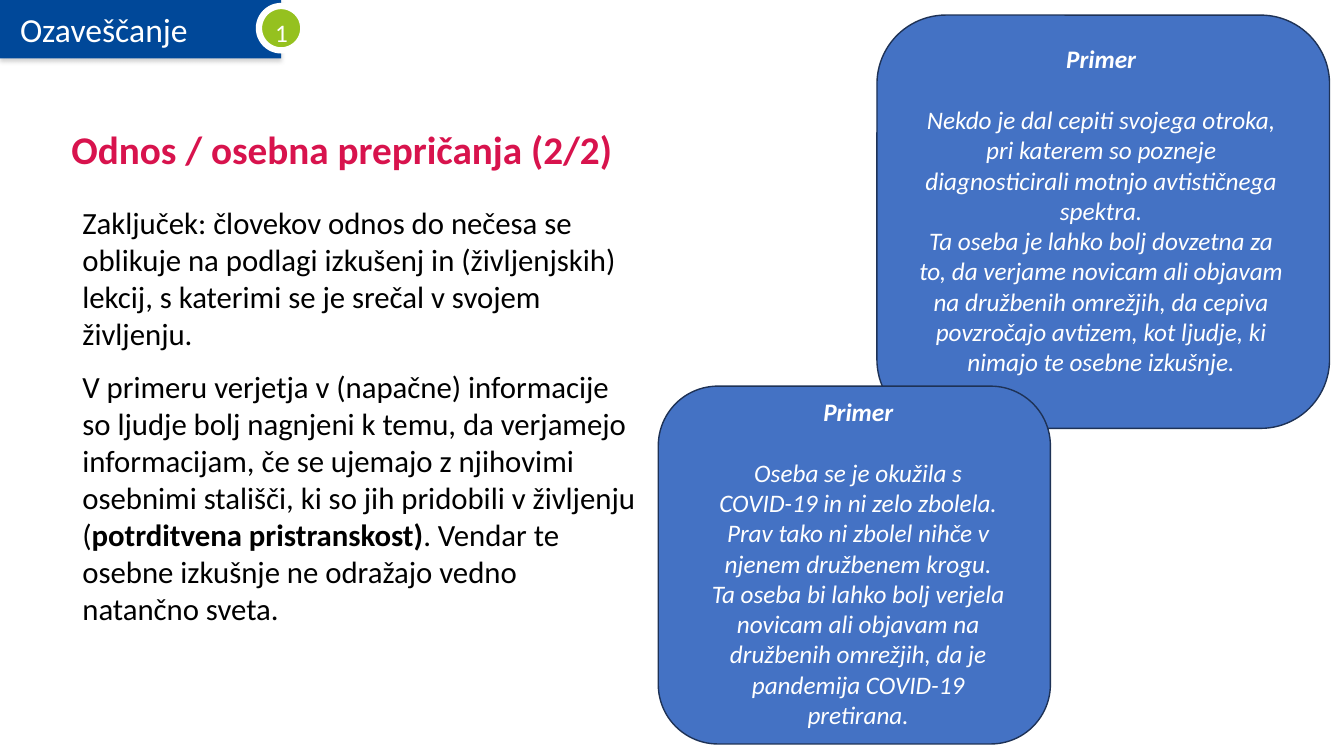
from dataclasses import dataclass

from lxml import etree
from pptx import Presentation
from pptx.enum import shapes, text
from pptx.dml.color import RGBColor
from pptx.oxml import ns
from pptx.util import Pt

COLORS = {
    "navy": "004899", "green": "95C11F", "white": "FFFFFF", "crimson": "D8134D",
    "black": "000000", "card": "4472C4", "card_line": "1E3256", "shadow": "808080",
}
KINDS = shapes.MSO_SHAPE
CENTER = text.PP_ALIGN.CENTER
MIDDLE = text.MSO_ANCHOR.MIDDLE


@dataclass(frozen=True)
class Box:
    left: float
    top: float
    width: float
    height: float

    def lengths(self) -> tuple:
        return Pt(self.left), Pt(self.top), Pt(self.width), Pt(self.height)


@dataclass(frozen=True)
class Run:
    words: str
    bold: bool = False


@dataclass(frozen=True)
class Style:
    size: float
    color: str
    italic: bool = False


@dataclass(frozen=True)
class Example:
    card: Box
    text_box: Box
    sentences: tuple


TITLE = "Odnos / osebna prepričanja (2/2)"
BODY = (
    (Run("Zaključek: človekov odnos do nečesa se oblikuje na podlagi izkušenj in "
         "(življenjskih) lekcij, s katerimi se je srečal v svojem življenju."),),
    (Run("V primeru verjetja v (napačne) informacije so ljudje bolj nagnjeni k temu, da "
         "verjamejo informacijam, če se ujemajo z njihovimi osebnimi stališči, ki so jih "
         "pridobili v življenju ("),
     Run("potrditvena pristranskost)", bold=True),
     Run(". Vendar te osebne izkušnje ne odražajo vedno natančno sveta.")),
)
EXAMPLES = (
    Example(
        Box(626.4, 10.8, 323.3, 295.2), Box(649.4, 27.4, 274.3, 334),
        ("Nekdo je dal cepiti svojega otroka, pri katerem so pozneje diagnosticirali "
         "motnjo avtističnega spektra.",
         "Ta oseba je lahko bolj dovzetna za to, da verjame novicam ali objavam na "
         "družbenih omrežjih, da cepiva povzročajo avtizem, kot ljudje, ki nimajo te "
         "osebne izkušnje.")),
    Example(
        Box(470.2, 275.8, 280.1, 255.6), Box(494.6, 279.4, 236.9, 247),
        ("Oseba se je okužila s COVID-19 in ni zelo zbolela. Prav tako ni zbolel nihče v "
         "njenem družbenem krogu.",
         "Ta oseba bi lahko bolj verjela novicam ali objavam na družbenih omrežjih, da je "
         "pandemija COVID-19 pretirana.")),
)


def rgb(name: str) -> RGBColor:
    return RGBColor.from_string(COLORS[name])


def apply(target, values: dict) -> None:
    """Set each named attribute of the target."""
    for name, value in values.items():
        setattr(target, name, value)


def add_panel(slide, kind, box: Box, fill: str, line: str = "", line_width: float = 0):
    shape = slide.shapes.add_shape(kind, *box.lengths())
    shape.shadow.inherit = False
    shape.fill.solid()
    shape.fill.fore_color.rgb = rgb(fill)
    if line:
        shape.line.color.rgb = rgb(line)
        shape.line.width = Pt(line_width)
    else:
        shape.line.fill.background()
    return shape


def add_drop_shadow(shape) -> None:
    effects = shape._element.spPr.find(ns.qn("a:effectLst"))
    shadow = etree.SubElement(effects, ns.qn("a:outerShdw"), blurRad=str(Pt(3.1)),
                              dist=str(Pt(1.8)), dir="5400000", rotWithShape="0")
    color = etree.SubElement(shadow, ns.qn("a:srgbClr"), val=COLORS["shadow"])
    etree.SubElement(color, ns.qn("a:alpha"), val="35000")


def write(shape, paragraphs: tuple, style: Style, paragraph_formats: tuple = (),
          **frame_format) -> None:
    """Fill a shape with paragraphs of runs; formats pair with paragraphs in order."""
    frame = shape.text_frame
    apply(frame, {"word_wrap": True, **frame_format})
    for index, runs in enumerate(paragraphs):
        paragraph = frame.paragraphs[0] if index == 0 else frame.add_paragraph()
        paragraph.alignment = text.PP_ALIGN.LEFT
        if index < len(paragraph_formats):
            apply(paragraph, paragraph_formats[index])
        for part in runs:
            run = paragraph.add_run()
            run.text = part.words
            apply(run.font, {"name": "Calibri", "size": Pt(style.size),
                             "bold": part.bold, "italic": style.italic})
            run.font.color.rgb = rgb(style.color)


def add_text(slide, box: Box, *content, **frame_format) -> None:
    write(slide.shapes.add_textbox(*box.lengths()), *content, **frame_format)


def add_header(slide) -> None:
    banner = add_panel(slide, KINDS.RECTANGLE, Box(0, 0, 200.9, 41.8), "navy")
    add_drop_shadow(banner)
    write(banner, ((Run("Ozaveščanje"),),), Style(24, "white"),
          vertical_anchor=MIDDLE, margin_left=Pt(14.4))
    add_panel(slide, KINDS.OVAL, Box(185, 4.3, 31.7, 31.7), "green", "white", 4.5)
    add_text(slide, Box(189.4, -2.2, 25.2, 36.7), ((Run("1"),),), Style(18, "white"),
             ({"line_spacing": 1.5},))


def add_example(slide, example: Example) -> None:
    add_panel(slide, KINDS.ROUNDED_RECTANGLE, example.card, "card", "card_line", 1)
    paragraphs = ((Run("Primer", bold=True),),
                  *((Run(sentence),) for sentence in example.sentences))
    centered = {"alignment": CENTER}
    formats = ({**centered, "space_after": Pt(22)}, centered, centered)
    add_text(slide, example.text_box, paragraphs, Style(18, "white", italic=True), formats)


def main() -> None:
    presentation = Presentation()
    apply(presentation, {"slide_width": Pt(960), "slide_height": Pt(540)})
    slide = presentation.slides.add_slide(presentation.slide_layouts[6])
    add_header(slide)
    add_text(slide, Box(43.9, 85, 897, 47.5), ((Run(TITLE, bold=True),),),
             Style(28, "crimson"), ({"line_spacing": 0.9},), vertical_anchor=MIDDLE)
    add_text(slide, Box(51.8, 141.8, 410.4, 385.2), BODY, Style(22, "black"),
             ({"space_after": Pt(12)},))
    for example in EXAMPLES:
        add_example(slide, example)
    presentation.save("out.pptx")


if __name__ == "__main__":
    main()
